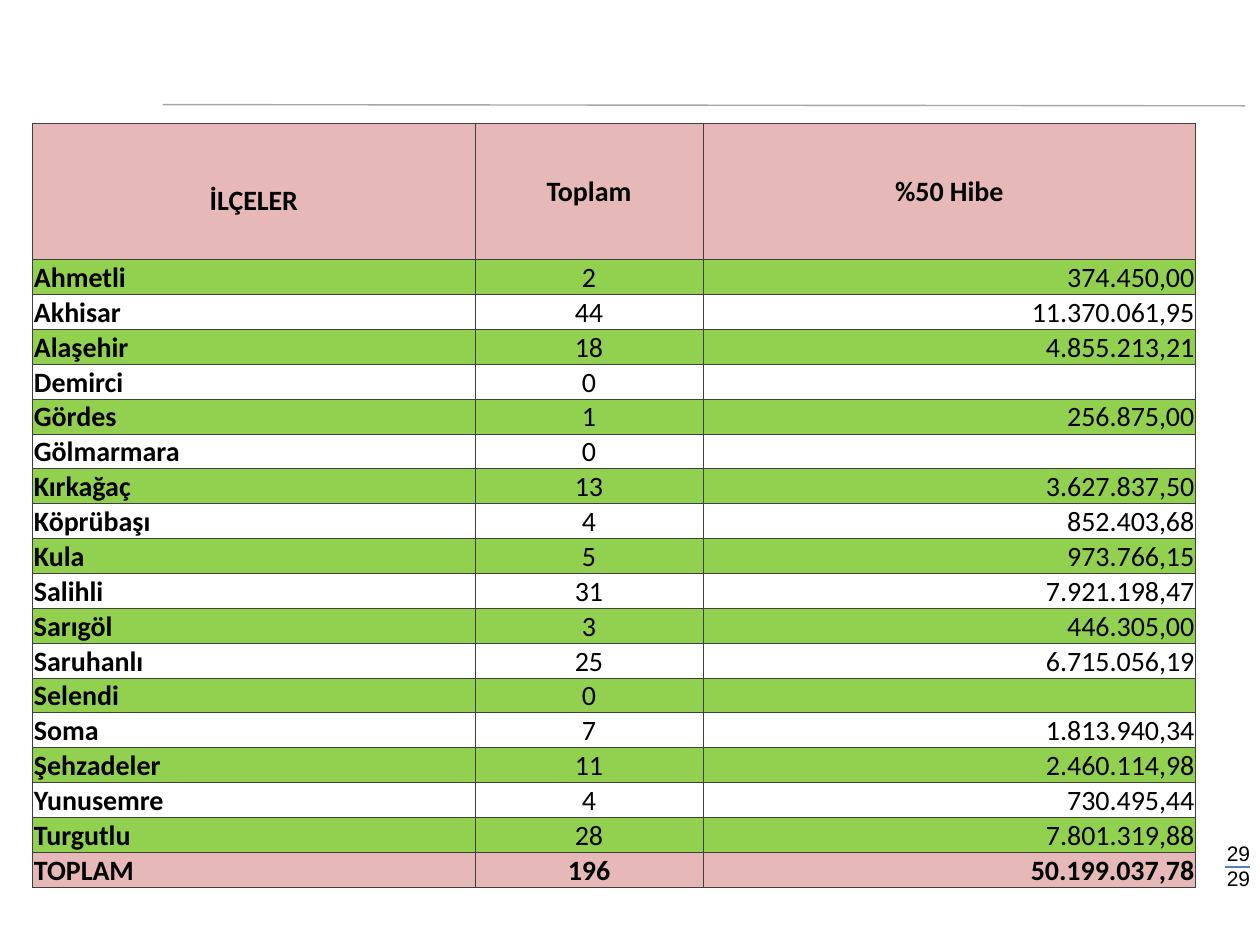
from lxml.etree import SubElement
from pptx import Presentation
from pptx.dml.color import RGBColor
from pptx.enum.shapes import MSO_CONNECTOR
from pptx.enum.text import MSO_ANCHOR, PP_ALIGN
from pptx.oxml.ns import qn
from pptx.util import Inches, Pt

BLACK, PINK, GREEN, BORDER = "000000", "E6B9B8", "92D050", "3F3F3F"
HEADERS = ("İLÇELER", "Toplam", "%50 Hibe")
DISTRICTS = (
    ("Ahmetli", "2", "374.450,00"),
    ("Akhisar", "44", "11.370.061,95"),
    ("Alaşehir", "18", "4.855.213,21"),
    ("Demirci", "0", ""),
    ("Gördes", "1", "256.875,00"),
    ("Gölmarmara", "0", ""),
    ("Kırkağaç", "13", "3.627.837,50"),
    ("Köprübaşı", "4", "852.403,68"),
    ("Kula", "5", "973.766,15"),
    ("Salihli", "31", "7.921.198,47"),
    ("Sarıgöl", "3", "446.305,00"),
    ("Saruhanlı", "25", "6.715.056,19"),
    ("Selendi", "0", ""),
    ("Soma", "7", "1.813.940,34"),
    ("Şehzadeler", "11", "2.460.114,98"),
    ("Yunusemre", "4", "730.495,44"),
    ("Turgutlu", "28", "7.801.319,88"),
)
TOTAL = ("TOPLAM", "196", "50.199.037,78")
COLUMN_WIDTHS = (3.51, 1.81, 3.91)
HEADER_HEIGHT, ROW_HEIGHT = 1.08, 0.27
ALIGNMENTS = (PP_ALIGN.LEFT, PP_ALIGN.CENTER, PP_ALIGN.RIGHT)


def color(value):
    return RGBColor.from_string(value)


def add_run(paragraph, text, size, font, bold=False):
    run = paragraph.add_run()
    run.text = text
    run.font.size = Pt(size)
    run.font.name = font
    run.font.bold = bold
    run.font.color.rgb = color(BLACK)


def add_line(slide, start, end, line_color):
    points = [Inches(value) for value in (*start, *end)]
    line = slide.shapes.add_connector(MSO_CONNECTOR.STRAIGHT, *points)
    line.line.color.rgb = color(line_color)
    line.line.width = Pt(0.79)
    SubElement(line._element.spPr, qn("a:effectLst"))


def add_borders(cell):
    properties = cell._tc.get_or_add_tcPr()
    for side in ("a:lnL", "a:lnR", "a:lnT", "a:lnB"):
        border = SubElement(properties, qn(side), w=str(Pt(0.5)))
        fill = SubElement(border, qn("a:solidFill"))
        SubElement(fill, qn("a:srgbClr"), val=BORDER)


def fill_cell(cell, text, alignment, anchor, bold, background):
    add_borders(cell)
    cell.margin_left = cell.margin_right = cell.margin_top = Inches(0.01)
    cell.margin_bottom = 0
    cell.vertical_anchor = anchor
    if background:
        cell.fill.solid()
        cell.fill.fore_color.rgb = color(background)
    else:
        cell.fill.background()
    paragraph = cell.text_frame.paragraphs[0]
    paragraph.alignment = alignment
    if text:
        add_run(paragraph, text, 16, "Calibri", bold)
    else:
        SubElement(paragraph._p, qn("a:endParaRPr"), sz="1600")


def add_grant_table(slide, left, top):
    records = (HEADERS, *DISTRICTS, TOTAL)
    last = len(records) - 1
    height = HEADER_HEIGHT + ROW_HEIGHT * last
    table = slide.shapes.add_table(
        len(records), len(HEADERS), Inches(left), Inches(top),
        Inches(sum(COLUMN_WIDTHS)), Inches(height)).table
    table.first_row = table.horz_banding = False
    for column, width in zip(table.columns, COLUMN_WIDTHS):
        column.width = Inches(width)
    for index, record in enumerate(records):
        is_header = index == 0
        is_summary = index in (0, last)
        table.rows[index].height = Inches(HEADER_HEIGHT if is_header else ROW_HEIGHT)
        background = PINK if is_summary else GREEN if index % 2 else None
        anchor = MSO_ANCHOR.MIDDLE if is_header else MSO_ANCHOR.BOTTOM
        for position, text in enumerate(record):
            alignment = PP_ALIGN.CENTER if is_header else ALIGNMENTS[position]
            fill_cell(table.cell(index, position), text, alignment, anchor,
                      is_summary or position == 0, background)
    table.cell(0, 0).margin_top = Inches(0.15)


def add_page_number(slide, left, top, width, height):
    box = slide.shapes.add_textbox(Inches(left), Inches(top), Inches(width), Inches(height))
    frame = box.text_frame
    frame.word_wrap = True
    paragraph = frame.paragraphs[0]
    paragraph.alignment = PP_ALIGN.RIGHT
    add_run(paragraph, "29", 12, "Arial")
    paragraph.add_line_break()
    add_run(paragraph, "29", 12, "Arial")
    middle = top + height / 2 + 0.01
    right = left + width - 0.1
    add_line(slide, (right - 0.2, middle), (right, middle), "4F81BD")


def main():
    presentation = Presentation()
    presentation.slide_width = Inches(10)
    presentation.slide_height = Inches(7.5)
    slide = presentation.slides.add_slide(presentation.slide_layouts[6])
    add_line(slide, (1.29, 0.83), (9.88, 0.84), "A6A6A6")
    add_page_number(slide, 9.48, 6.62, 0.54, 0.5)
    add_grant_table(slide, 0.26, 0.98)
    presentation.save("out.pptx")


if __name__ == "__main__":
    main()
